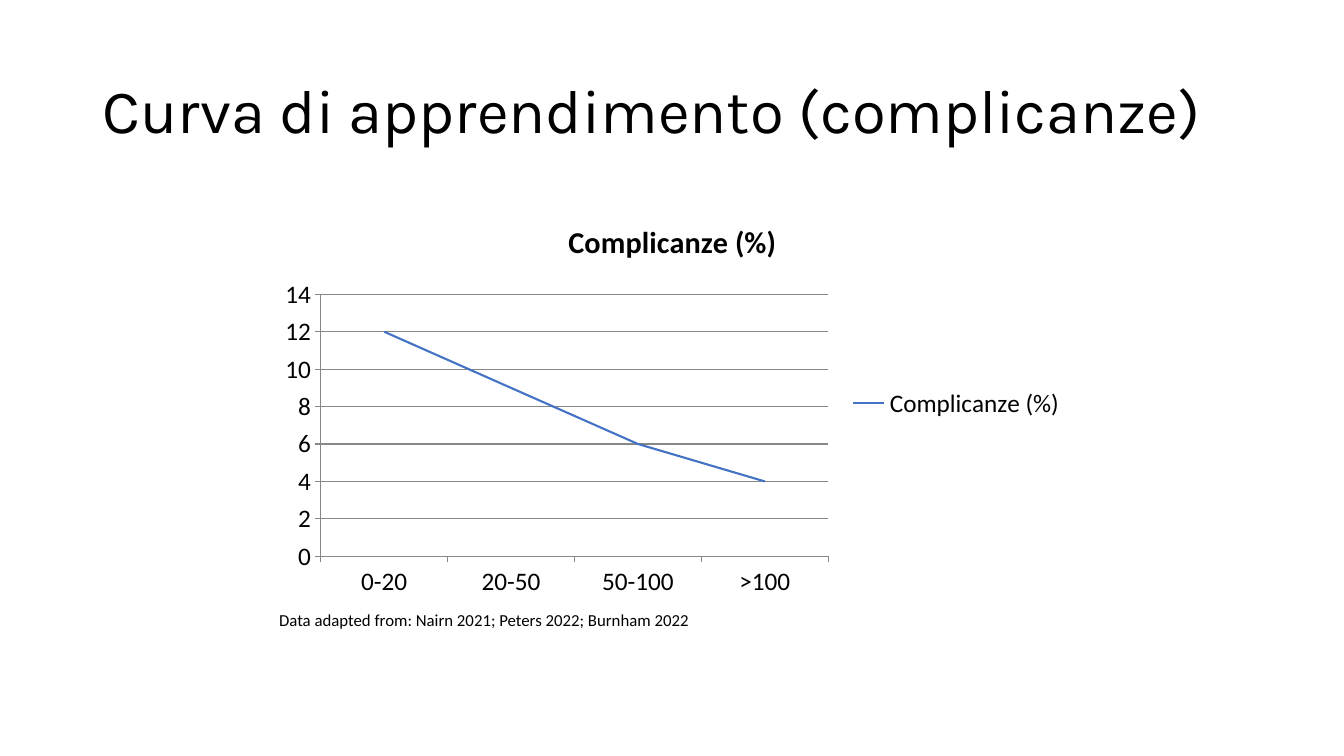
from pptx import Presentation
from pptx.chart.data import CategoryChartData
from pptx.dml.color import RGBColor
from pptx.enum.chart import XL_CHART_TYPE, XL_LEGEND_POSITION, XL_MARKER_STYLE, XL_TICK_MARK
from pptx.enum.text import MSO_ANCHOR, MSO_AUTO_SIZE, PP_ALIGN
from pptx.util import Inches, Pt

BLACK = RGBColor(0x00, 0x00, 0x00)
BLUE = RGBColor(0x44, 0x72, 0xC4)
GRAY = RGBColor(0x87, 0x87, 0x87)


def style_font(font, name, size, bold=False):
    font.name = name
    font.size = Pt(size)
    font.bold = bold
    font.color.rgb = BLACK


prs = Presentation()
prs.slide_width = Inches(13.33)
prs.slide_height = Inches(7.5)
s = prs.slides.add_slide(prs.slide_layouts[5])

# Title
title = s.shapes.title
title.left, title.top = Inches(0.92), Inches(0.4)
title.width, title.height = Inches(11.5), Inches(1.45)
tf = title.text_frame
tf.word_wrap = True
tf.auto_size = MSO_AUTO_SIZE.NONE
tf.vertical_anchor = MSO_ANCHOR.MIDDLE
p = tf.paragraphs[0]
p.alignment = PP_ALIGN.LEFT
p.line_spacing = 0.9
r = p.add_run()
r.text = "Curva di apprendimento (complicanze)"
style_font(r.font, "Karla", 44)

# Complication rate by number of cases
data = CategoryChartData()
data.categories = ["0-20", "20-50", "50-100", ">100"]
data.add_series("Complicanze (%)", [12, 9, 6, 4])
chart = s.shapes.add_chart(
    XL_CHART_TYPE.LINE, Inches(2.67), Inches(2), Inches(8), Inches(4), data
).chart
style_font(chart.font, "Calibri", 18)

chart.has_title = True
r = chart.chart_title.text_frame.paragraphs[0].add_run()
r.text = "Complicanze (%)"
style_font(r.font, "Calibri", 21.6, bold=True)
chart.chart_title.include_in_layout = False

chart.has_legend = True
chart.legend.position = XL_LEGEND_POSITION.RIGHT
chart.legend.include_in_layout = False

chart.plots[0].vary_by_categories = False
series = chart.plots[0].series[0]
series.smooth = False
series.marker.style = XL_MARKER_STYLE.NONE
series.format.line.color.rgb = BLUE
series.format.line.width = Pt(1.5)

value_axis = chart.value_axis
value_axis.minimum_scale = 0
value_axis.maximum_scale = 14
value_axis.major_unit = 2
value_axis.has_major_gridlines = True
for axis in (chart.category_axis, value_axis):
    axis.major_tick_mark = XL_TICK_MARK.OUTSIDE
    axis.minor_tick_mark = XL_TICK_MARK.NONE
for part in (chart.category_axis, value_axis, value_axis.major_gridlines):
    part.format.line.color.rgb = GRAY
    part.format.line.width = Pt(0.75)

# Data sources
sources = s.shapes.add_textbox(Inches(2.67), Inches(6), Inches(4.32), Inches(0.3))
tf = sources.text_frame
tf.word_wrap = False
tf.auto_size = MSO_AUTO_SIZE.SHAPE_TO_FIT_TEXT
r = tf.paragraphs[0].add_run()
r.text = "Data adapted from: Nairn 2021; Peters 2022; Burnham 2022"
style_font(r.font, "Calibri", 12)

prs.save("out.pptx")
